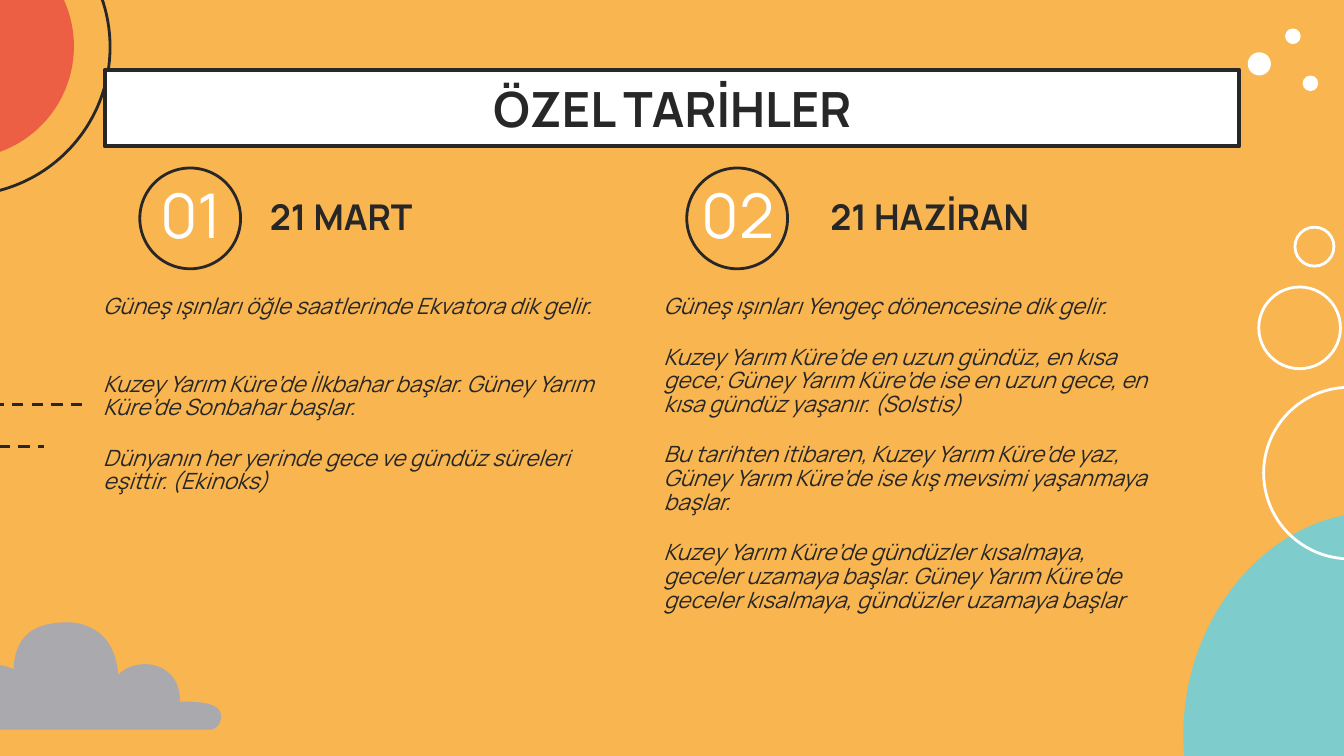
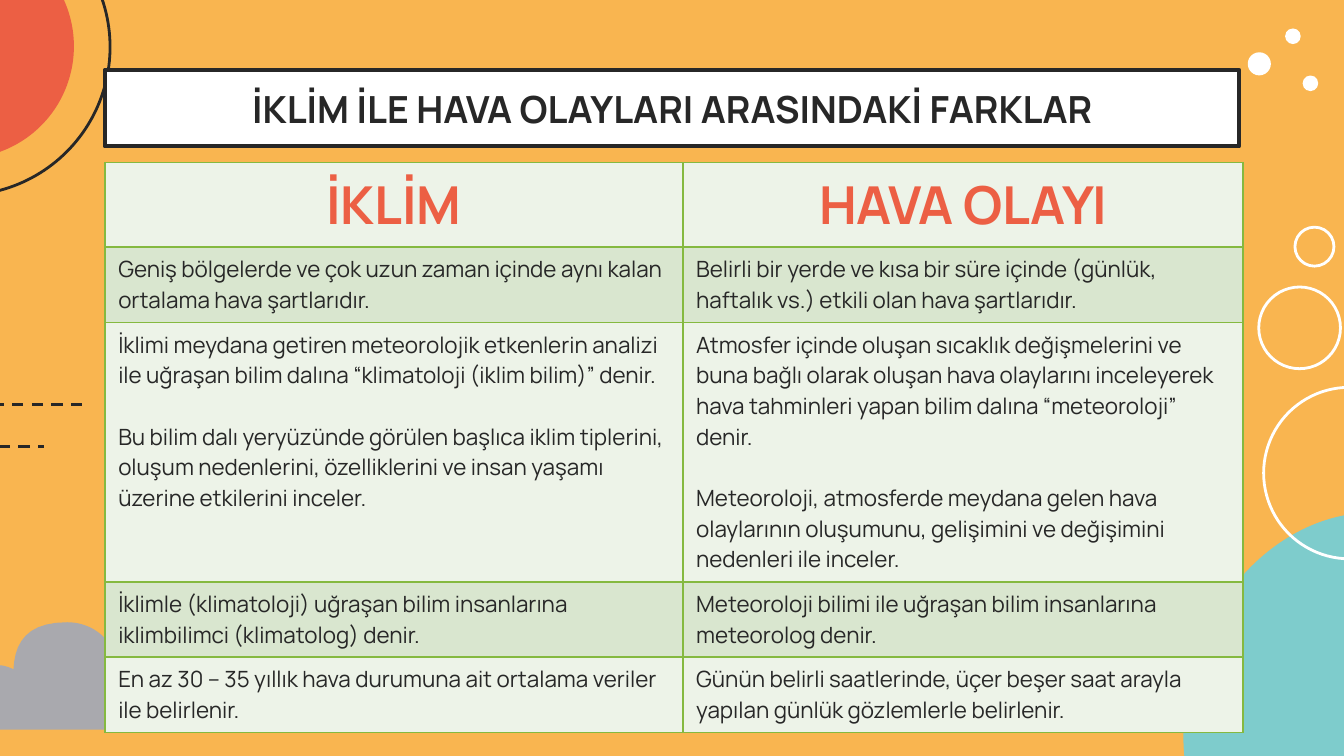
"""Build two slides on special dates and on climate versus weather."""
from dataclasses import dataclass

from lxml.etree import SubElement as Sub
from pptx import Presentation
from pptx.dml.color import RGBColor
from pptx.enum.dml import MSO_LINE
from pptx.enum.shapes import MSO_CONNECTOR, MSO_SHAPE as Kind
from pptx.enum.text import MSO_ANCHOR as Anchor, PP_ALIGN as Align
from pptx.oxml.ns import qn
from pptx.util import Emu, Inches, Pt

COLS = 100
WIDE, HIGH = Inches(10), Inches(5.625)
UNIT = WIDE // COLS
FONT = "Manrope"
SAND, INK, WHITE = "F9B550", "272727", "FFFFFF"
CORAL, AQUA, GRAY = "EC5F44", "7ECCCC", "A9A9AE"
PALE, MINT, GREEN = "EDF3E8", "D9E6CF", "85B940"
TIGHT = 0.88
GAP = 14.4


@dataclass(frozen=True)
class Box:
    """An area of the grid, in columns and rows."""
    left: float
    top: float
    wide: float
    high: float


@dataclass(frozen=True)
class Disc:
    """A circle by its centre and radius, filled or outlined."""
    x: float
    y: float
    rad: float
    fill: str | None = None
    line: str | None = None


@dataclass(frozen=True)
class Dash:
    """A level dashed line."""
    start: float
    end: float
    y: float


@dataclass(frozen=True)
class Date:
    """A numbered date with its notes."""
    num: str
    name: str
    disc: float
    head: float
    body: float
    high: float
    gaps: tuple[float, ...]
    notes: tuple[str, ...]


BAND = Box(7.8, 5.2, 84.4, 5.7)
TITLE = Box(10.7, 4.9, 78.7, 6.3)
GLOBE = Box(88.2, 38, 25.9, 30.8)
SUN = (
    Disc(-2.85, 3.5, 11.04, line=INK),
    Disc(-2.85, 3.45, 8.35, fill=CORAL),
)
DISCS = (
    Disc(93.7, 4.75, 0.86, fill=WHITE),
    Disc(96.2, 2.7, 0.58, fill=WHITE),
    Disc(97.5, 6.2, 0.58, fill=WHITE),
    Disc(100.4, 35.2, 6.38, line=WHITE),
    Disc(96.7, 24.4, 3.04, line=WHITE),
    Disc(97.8, 18.35, 1.45, line=WHITE),
)
DASHES = (Dash(-14.7, 3.3, 33.2), Dash(-6.4, 6.3, 30.1))
CLOUD = (
    (5, 46.3, 5, 46.3, 5, 46.3),
    (2, 46.3, 1.1, 47.8, 1, 49.8),
    (0.6, 49.6, 0.2, 49.5, -0.1, 49.5),
    (-1.1, 49.5, -2, 50.1, -2.1, 51.5),
    (-2.7, 50.4, -4.5, 50.4, -4.8, 52),
    (-5.5, 50.2, -9.4, 50.4, -9.5, 53.2),
    (-11, 52.2, -12.2, 53.8, -11, 54.4),
    (-7.4, 54.3, -3.7, 54.3, 0.1, 54.3),
    (5.5, 54.3, 10.5, 54.3, 15.6, 54.3),
    (16.2, 54.3, 16.6, 53.6, 16.4, 53),
    (16.1, 52.4, 15.3, 52.2, 13.4, 52.2),
    (13.4, 51.1, 13, 50.1, 11.8, 49.6),
    (10.7, 49.2, 9.5, 49.5, 8.8, 50.2),
    (8.7, 49.1, 8.4, 48, 7.5, 47.2),
    (6.8, 46.6, 5.9, 46.3, 5, 46.3),
)
DATES = (
    Date("01", "21 MART", 14.15, 19.1, 6.7, 18.9, (2 * GAP, GAP), (
        "Güneş ışınları öğle saatlerinde Ekvatora dik gelir.",
        "Kuzey Yarım Küre’de İlkbahar başlar. Güney Yarım Küre’de Sonbahar başlar.",
        "Dünyanın her yerinde gece ve gündüz süreleri eşittir. (Ekinoks)",
    )),
    Date("02", "21 HAZİRAN", 54.85, 60.8, 48.4, 33.1, (GAP, GAP, GAP), (
        "Güneş ışınları Yengeç dönencesine dik gelir.",
        "Kuzey Yarım Küre’de en uzun gündüz, en kısa gece; Güney Yarım Küre’de "
        "ise en uzun gece, en kısa gündüz yaşanır. (Solstis)",
        "Bu tarihten itibaren, Kuzey Yarım Küre’de yaz, Güney Yarım Küre’de ise "
        "kış mevsimi yaşanmaya başlar.",
        "Kuzey Yarım Küre’de gündüzler kısalmaya, geceler uzamaya başlar. Güney "
        "Yarım Küre’de geceler kısalmaya, gündüzler uzamaya başlar",
    )),
)
WIDTHS = (43, 41.7)
ROWS = (
    (6.3, ("İKLİM",), ("HAVA OLAYI",)),
    (5.6,
     ("Geniş bölgelerde ve çok uzun zaman içinde aynı kalan ortalama hava "
      "şartlarıdır.",),
     ("Belirli bir yerde ve kısa bir süre içinde (günlük, haftalık vs.) etkili "
      "olan hava şartlarıdır.",)),
    (19.3,
     ("İklimi meydana getiren meteorolojik etkenlerin analizi ile uğraşan bilim "
      "dalına “klimatoloji (iklim bilim)” denir.",
      "Bu bilim dalı yeryüzünde görülen başlıca iklim tiplerini, oluşum "
      "nedenlerini, özelliklerini ve insan yaşamı üzerine etkilerini inceler."),
     ("Atmosfer içinde oluşan sıcaklık değişmelerini ve buna bağlı olarak oluşan "
      "hava olaylarını inceleyerek hava tahminleri yapan bilim dalına "
      "“meteoroloji” denir.",
      "Meteoroloji, atmosferde meydana gelen hava olaylarının oluşumunu, "
      "gelişimini ve değişimini nedenleri ile inceler.")),
    (5.6,
     ("İklimle (klimatoloji) uğraşan bilim insanlarına iklimbilimci (klimatolog) "
      "denir.",),
     ("Meteoroloji bilimi ile uğraşan bilim insanlarına meteorolog denir.",)),
    (5.6,
     ("En az 30 – 35 yıllık hava durumuna ait ortalama veriler ile belirlenir.",),
     ("Günün belirli saatlerinde, üçer beşer saat arayla yapılan günlük "
      "gözlemlerle belirlenir.",)),
)


def cell(num: float) -> Emu:
    """Turn grid units into a length."""
    return Emu(round(num * UNIT))


def spot(box: Box) -> tuple[Emu, ...]:
    """Give a box as four lengths."""
    return tuple(map(cell, (box.left, box.top, box.wide, box.high)))


def tint(code: str) -> RGBColor:
    """Turn a hex string into a colour."""
    return RGBColor.from_string(code)


def paint(shape, fill: str | None = None, line: str | None = None,
          thick: float = 1.5) -> None:
    """Set fill and line, and drop the shadow."""
    shape.shadow.inherit = False
    if fill:
        shape.fill.solid()
        shape.fill.fore_color.rgb = tint(fill)
    else:
        shape.fill.background()
    if line:
        shape.line.color.rgb = tint(line)
        shape.line.width = Pt(thick)
    else:
        shape.line.fill.background()


def write(frame, *lines: str, size: float = 12, color: str = INK,
          bold: bool = False, slant: bool = False, align=Align.LEFT,
          space: float = 1.0, gaps: tuple[float, ...] = ()) -> None:
    """Fill a text frame with one paragraph for each line."""
    for num, (line, gap) in enumerate(zip(lines, (0, *gaps))):
        para = frame.add_paragraph() if num else frame.paragraphs[0]
        para.alignment = align
        para.line_spacing = space
        para.space_before = Pt(gap)
        run = para.add_run()
        run.text = line
        font = run.font
        font.name, font.size = FONT, Pt(size)
        font.bold, font.italic = bold, slant
        font.color.rgb = tint(color)


def label(slide, box: Box, *lines: str, anchor=Anchor.MIDDLE, **style) -> None:
    """Add a wrapped text box."""
    frame = slide.shapes.add_textbox(*spot(box)).text_frame
    frame.word_wrap = True
    frame.vertical_anchor = anchor
    frame.margin_left = frame.margin_right = cell(1)
    frame.margin_top = frame.margin_bottom = cell(1)
    write(frame, *lines, **style)


def draw(slide, disc: Disc) -> None:
    """Add a circle."""
    box = Box(disc.x - disc.rad, disc.y - disc.rad, 2 * disc.rad, 2 * disc.rad)
    paint(slide.shapes.add_shape(Kind.OVAL, *spot(box)), disc.fill, disc.line)


def rule(slide, dash: Dash) -> None:
    """Add a dashed line."""
    y = cell(dash.y)
    link = slide.shapes.add_connector(
        MSO_CONNECTOR.STRAIGHT, cell(dash.start), y, cell(dash.end), y)
    link.line.color.rgb = tint(INK)
    link.line.width = Pt(1.5)
    link.line.dash_style = MSO_LINE.DASH
    Sub(link._element.spPr, qn("a:effectLst"))


def bend(a: float, b: float, c: float, d: float, t: float) -> float:
    """Find a value on a cubic curve."""
    s = 1 - t
    return s ** 3 * a + 3 * s * s * t * b + 3 * s * t * t * c + t ** 3 * d


def cloud(slide, steps: int = 10) -> None:
    """Add the cloud outline."""
    x, y = CLOUD[0][-2:]
    form = slide.shapes.build_freeform(cell(x), cell(y), scale=1.0)
    dots = []
    for ax, ay, bx, by, ex, ey in CLOUD[1:]:
        for num in range(1, steps + 1):
            t = num / steps
            dots.append((cell(bend(x, ax, bx, ex, t)),
                         cell(bend(y, ay, by, ey, t))))
        x, y = ex, ey
    form.add_line_segments(dots, close=True)
    paint(form.convert_to_shape(), GRAY)


def start(deck, title: str, size: float):
    """Add a slide with the shared scene and its title."""
    slide = deck.slides.add_slide(deck.slide_layouts[6])
    back = slide.background.fill
    back.solid()
    back.fore_color.rgb = tint(SAND)
    for disc in SUN:
        draw(slide, disc)
    globe = slide.shapes.add_shape(Kind.OVAL, *spot(GLOBE))
    globe.rotation = 14
    paint(globe, AQUA)
    for dash in DASHES:
        rule(slide, dash)
    cloud(slide)
    for disc in DISCS:
        draw(slide, disc)
    band = slide.shapes.add_shape(Kind.RECTANGLE, *spot(BAND))
    paint(band, WHITE, INK, 2.25)
    label(slide, TITLE, title, size=size, bold=True, align=Align.CENTER)
    return slide


def entry(slide, date: Date) -> None:
    """Add one date with its badge and notes."""
    label(slide, Box(date.disc - 4.85, 13, 9.8, 5.8), date.num, size=33,
          color=WHITE, align=Align.CENTER)
    draw(slide, Disc(date.disc, 16.25, 3.75, line=INK))
    label(slide, Box(date.head, 13.2, 30.2, 5.5), date.name, size=19,
          bold=True, anchor=Anchor.BOTTOM)
    label(slide, Box(date.body, 21, 38.7, date.high), *date.notes, slant=True,
          space=TIGHT, gaps=date.gaps, anchor=Anchor.TOP)


def edge(item) -> None:
    """Draw thin green borders round a table cell."""
    props = item._tc.get_or_add_tcPr()
    for side in ("lnL", "lnR", "lnT", "lnB"):
        line = Sub(props, qn(f"a:{side}"), w=str(Pt(1)))
        Sub(Sub(line, qn("a:solidFill")), qn("a:srgbClr"), val=GREEN)


def grid(slide) -> None:
    """Add the table that compares climate and weather."""
    area = Box(BAND.left, 12.1, sum(WIDTHS), sum(row[0] for row in ROWS))
    table = slide.shapes.add_table(len(ROWS), len(WIDTHS), *spot(area)).table
    table.first_row = table.horz_banding = False
    for col, wide in zip(table.columns, WIDTHS):
        col.width = cell(wide)
    head = dict(size=28, color=CORAL, bold=True, align=Align.CENTER)
    for num, (high, *texts) in enumerate(ROWS):
        table.rows[num].height = cell(high)
        for pos, lines in enumerate(texts):
            item = table.cell(num, pos)
            edge(item)
            item.fill.solid()
            item.fill.fore_color.rgb = tint(MINT if num % 2 else PALE)
            write(item.text_frame, *lines, gaps=(16.4,),
                  **({} if num else head))


def main() -> None:
    """Build and save the deck."""
    deck = Presentation()
    deck.slide_width, deck.slide_height = WIDE, HIGH
    dates = start(deck, "ÖZEL TARİHLER", 26)
    for date in DATES:
        entry(dates, date)
    grid(start(deck, "İKLİM İLE HAVA OLAYLARI ARASINDAKİ FARKLAR", 20))
    deck.save("out.pptx")


if __name__ == "__main__":
    main()
